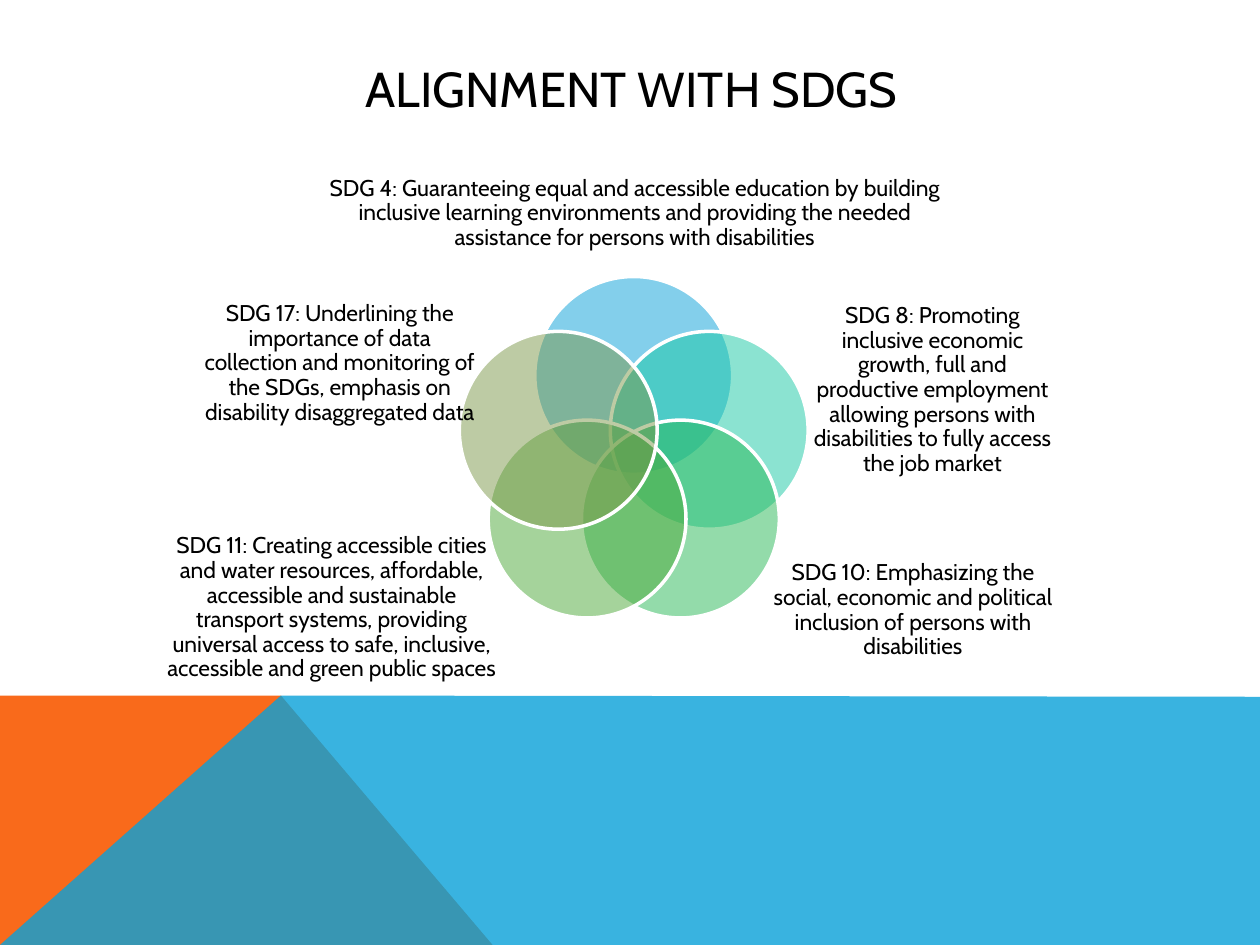
from math import cos, radians, sin

from pptx import Presentation
from pptx.dml.color import RGBColor
from pptx.enum.shapes import MSO_SHAPE as Shape
from pptx.enum.text import MSO_ANCHOR as Anchor, PP_ALIGN as Align
from pptx.oxml.ns import qn
from pptx.util import Inches, Pt
from lxml.etree import SubElement

COLORS = {
    "text": "000000", "outline": "FFFFFF", "orange": "F96A1B", "blue": "08A1D9",
    "teal": "18C9A4", "green": "29B956", "leaf": "4CA839", "olive": "7C984A",
}


def paint(shape, color, opacity):
    shape.shadow.inherit = False
    shape.fill.solid()
    shape.fill.fore_color.rgb = RGBColor.from_string(COLORS[color])
    if opacity < 100:
        color_element = shape.fill._xPr.find(qn("a:solidFill"))[0]
        SubElement(color_element, qn("a:alpha"), val=str(opacity * 1000))


def add_text(slide, text, box, size, paragraph_format, frame_format):
    shape = slide.shapes.add_textbox(*map(Inches, box))
    frame = shape.text_frame
    frame_values = {"word_wrap": True, "vertical_anchor": Anchor.MIDDLE, **frame_format}
    for name, value in frame_values.items():
        setattr(frame, name, value)
    paragraph = frame.paragraphs[0]
    paragraph.text = text
    for name, value in {"alignment": Align.CENTER, **paragraph_format}.items():
        setattr(paragraph, name, value)
    font = paragraph.runs[0].font
    for name, value in {"name": "Cabin", "size": Pt(size)}.items():
        setattr(font, name, value)
    font.color.rgb = RGBColor.from_string(COLORS["text"])


presentation = Presentation()
presentation.slide_width = Inches(10)
presentation.slide_height = Inches(7.5)
slide = presentation.slides.add_slide(presentation.slide_layouts[6])

bands = [
    ("orange", 100, [(0, 7.5), (0, 5.52), (2.23, 5.52), (3.91, 7.5)]),
    ("blue", 80, [(0, 7.5), (2.23, 5.52), (10, 5.53), (10, 7.5)]),
]
for color, opacity, corners in bands:
    points = [(Inches(x), Inches(y)) for x, y in corners]
    builder = slide.shapes.build_freeform(*points[0])
    builder.add_line_segments(points[1:], close=True)
    band = builder.convert_to_shape()
    paint(band, color, opacity)
    band.line.fill.background()

add_text(slide, "ALIGNMENT WITH SDGS", (0.9, 0.4, 8.22, 0.6), 28, {}, {})

goals = [
    ("blue", (2.48, 1.34, 5.11, 0.71),
     "SDG 4: Guaranteeing equal and accessible education by building inclusive "
     "learning environments and providing the needed assistance for persons with "
     "disabilities"),
    ("teal", (6.4, 2.52, 2, 1.15),
     "SDG 8: Promoting inclusive economic growth, full and productive employment "
     "allowing persons with disabilities to fully access the job market"),
    ("green", (6.13, 4.27, 2.23, 1.15),
     "SDG 10: Emphasizing the social, economic and political inclusion of persons "
     "with disabilities"),
    ("leaf", (1.31, 4.25, 2.64, 1.15),
     "SDG 11: Creating accessible cities and water resources, affordable, accessible "
     "and sustainable transport systems, providing universal access to safe, "
     "inclusive, accessible and green public spaces"),
    ("olive", (1.59, 2.31, 2.21, 1.15),
     "SDG 17: Underlining the importance of data collection and monitoring of the "
     "SDGs, emphasis on disability disaggregated data"),
]
center_x, center_y, ring_radius, diameter = 5.03, 3.61, 0.63, 1.57
label_paragraph = {"line_spacing": 0.9, "space_after": Pt(4.55)}
label_frame = {f"margin_{side}": 0 for side in ("left", "top", "right", "bottom")}

for index, (color, box, text) in enumerate(goals):
    angle = radians(index * 360 / len(goals))
    left = center_x + ring_radius * sin(angle) - diameter / 2
    top = center_y - ring_radius * cos(angle) - diameter / 2
    circle = slide.shapes.add_shape(
        Shape.OVAL, Inches(left), Inches(top), Inches(diameter), Inches(diameter))
    paint(circle, color, 50)
    circle.line.color.rgb = RGBColor.from_string(COLORS["outline"])
    circle.line.width = Pt(2)
    add_text(slide, text, box, 13, label_paragraph, label_frame)

presentation.save("out.pptx")
